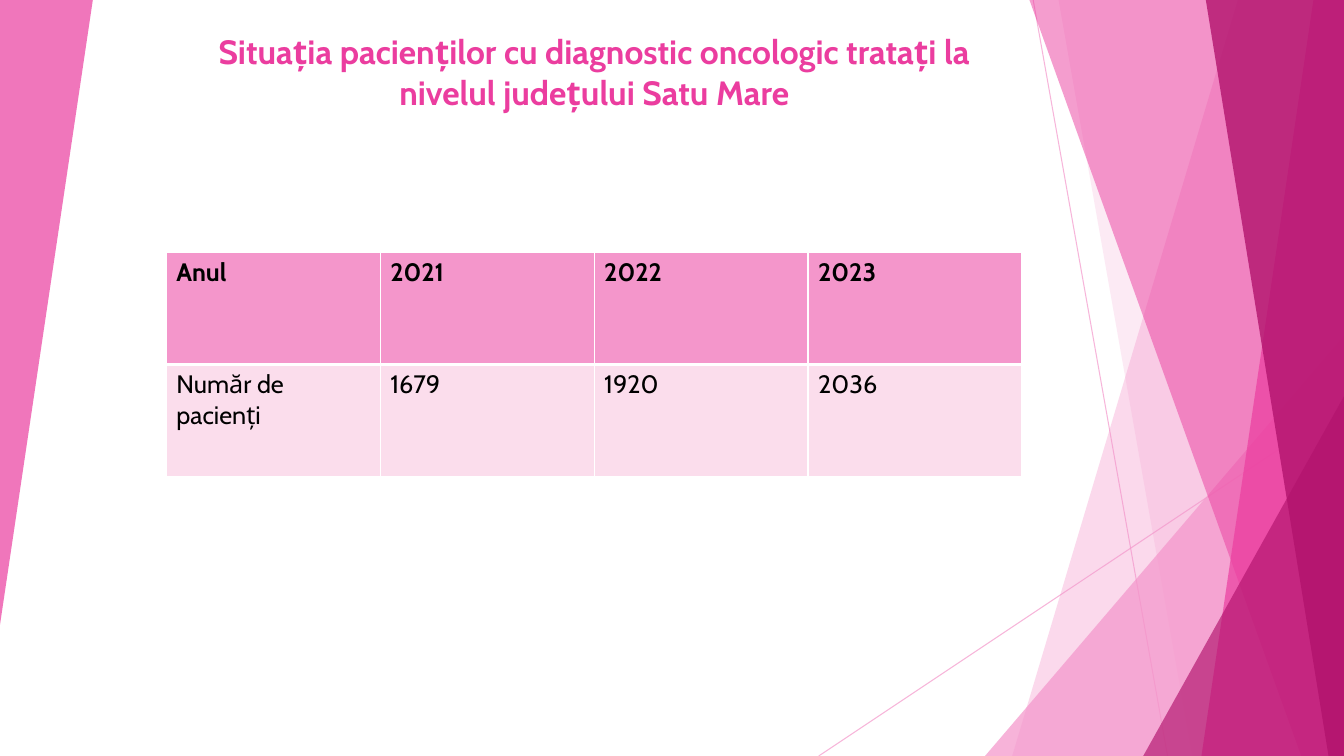
from lxml import etree
from pptx import Presentation
from pptx.dml.color import RGBColor
from pptx.enum.shapes import MSO_CONNECTOR, MSO_SHAPE
from pptx.enum.text import MSO_ANCHOR, MSO_AUTO_SIZE, PP_ALIGN
from pptx.oxml.ns import qn
from pptx.util import Pt

STRAIGHT = MSO_CONNECTOR.STRAIGHT
TRIANGLE = MSO_SHAPE.ISOSCELES_TRIANGLE
TOP, BOTTOM = MSO_ANCHOR.TOP, MSO_ANCHOR.BOTTOM
CENTER = PP_ALIGN.CENTER
NO_FIT = MSO_AUTO_SIZE.NONE

TITLE = "Situația pacienților cu diagnostic oncologic tratați la nivelul județului Satu Mare"
PATIENTS = [
    ["Anul", "2021", "2022", "2023"],
    ["Număr de pacienți", "1679", "1920", "2036"],
]

THEME = {
    "font": "Cabin", "title_size": 24, "cell_size": 18,
    "light": "F496CB", "pink": "EB3D9F", "dark": "B2136D",
    "pale": "FBDDEC", "text": "000000", "white": "FFFFFF",
}

W, H, BLEED = 960, 540, -0.72
TITLE_BOX = (118.8, 19.4, 611.2, 64.1)
TABLE_BOX = (118.8, 180.3, 611.2, 160)
RAYS = [((738, 0), (834, H)), ((W, 290), (584.8, H))]
RAY_ALPHA = 70
SHARDS = [
    ("band", (884.4, 723), "light", 36),
    ("band", (756, 851.6), "light", 20),
    ("triangle", (703.6, 240, 256.4, 300, 0), "light", 72),
    ("band", (735.1, 929.5), "pink", 50),
    ("band", (938.3, 858.2), "pink", 70),
    ("band", (861.2, 949), "dark", 80),
    ("triangle", (816.6, 283, 143.4, 257, 0), "dark", 66),
    ("triangle", (0, 0, 66.3, 446.2, 180), "pink", 70),
]


def rgb(name):
    return RGBColor.from_string(THEME[name])


def points(values):
    return [Pt(v) for v in values]


def set_alpha(sp, percent):
    for clr in sp._element.spPr.iter(qn("a:srgbClr")):
        etree.SubElement(clr, qn("a:alpha"), val=str(percent * 1000))


def style_run(r, **values):
    r.font.color.rgb = rgb(values.pop("color"))
    for key, value in {"name": THEME["font"], **values}.items():
        setattr(r.font, key, value)


def add_ray(s, start, end):
    ray = s.shapes.add_connector(STRAIGHT, *points(start + end))
    ray.line.width = Pt(0.75)
    ray.line.color.rgb = rgb("light")
    set_alpha(ray, RAY_ALPHA)
    etree.SubElement(ray._element.spPr, qn("a:effectLst"))


def add_shard(s, kind, geometry, color, alpha):
    if kind == "band":
        top_x, bottom_x = geometry
        outline = [(W, BLEED), (W, H), (bottom_x, H)]
        builder = s.shapes.build_freeform(Pt(top_x), Pt(BLEED))
        builder.add_line_segments([points(xy) for xy in outline], close=True)
        sp = builder.convert_to_shape()
    else:
        *box, rotation = geometry
        sp = s.shapes.add_shape(TRIANGLE, *points(box))
        sp.adjustments[0] = 1
        sp.rotation = rotation
    sp.shadow.inherit = False
    sp.fill.solid()
    sp.fill.fore_color.rgb = rgb(color)
    sp.line.fill.background()
    set_alpha(sp, alpha)


def add_title(s):
    title = s.shapes.title
    for key, value in zip(("left", "top", "width", "height"), points(TITLE_BOX)):
        setattr(title, key, value)
    tf = title.text_frame
    for key, value in {"word_wrap": True, "auto_size": NO_FIT, "vertical_anchor": BOTTOM}.items():
        setattr(tf, key, value)
    p = tf.paragraphs[0]
    p.alignment = CENTER
    r = p.add_run()
    r.text = TITLE
    style_run(r, size=Pt(THEME["title_size"]), bold=True, color="pink")
    title._element.getparent().append(title._element)


def add_borders(cell, widths):
    tc_pr = cell._tc.get_or_add_tcPr()
    for side, width in widths.items():
        ln = etree.SubElement(tc_pr, qn(f"a:ln{side}"), w=str(Pt(width)))
        fill = etree.SubElement(ln, qn("a:solidFill"))
        etree.SubElement(fill, qn("a:srgbClr"), val=THEME["white"])


def add_patient_table(s):
    rows, cols = len(PATIENTS), len(PATIENTS[0])
    table = s.shapes.add_table(rows, cols, *points(TABLE_BOX)).table
    for i, values in enumerate(PATIENTS):
        table.rows[i].height = Pt(TABLE_BOX[3] / rows)
        header = i == 0
        widths = {"L": 1, "R": 1, "T": 1 if header else 3, "B": 3 if header else 1}
        for j, value in enumerate(values):
            cell = table.cell(i, j)
            add_borders(cell, widths)
            cell.fill.solid()
            cell.fill.fore_color.rgb = rgb("light" if header else "pale")
            cell.vertical_anchor = TOP
            r = cell.text_frame.paragraphs[0].add_run()
            r.text = value
            style_run(r, size=Pt(THEME["cell_size"]), bold=header, color="text")


def main():
    prs = Presentation()
    prs.slide_width, prs.slide_height = points((W, H))
    s = prs.slides.add_slide(prs.slide_layouts[5])
    for start, end in RAYS:
        add_ray(s, start, end)
    for shard in SHARDS:
        add_shard(s, *shard)
    add_title(s)
    add_patient_table(s)
    prs.save("out.pptx")


if __name__ == "__main__":
    main()
